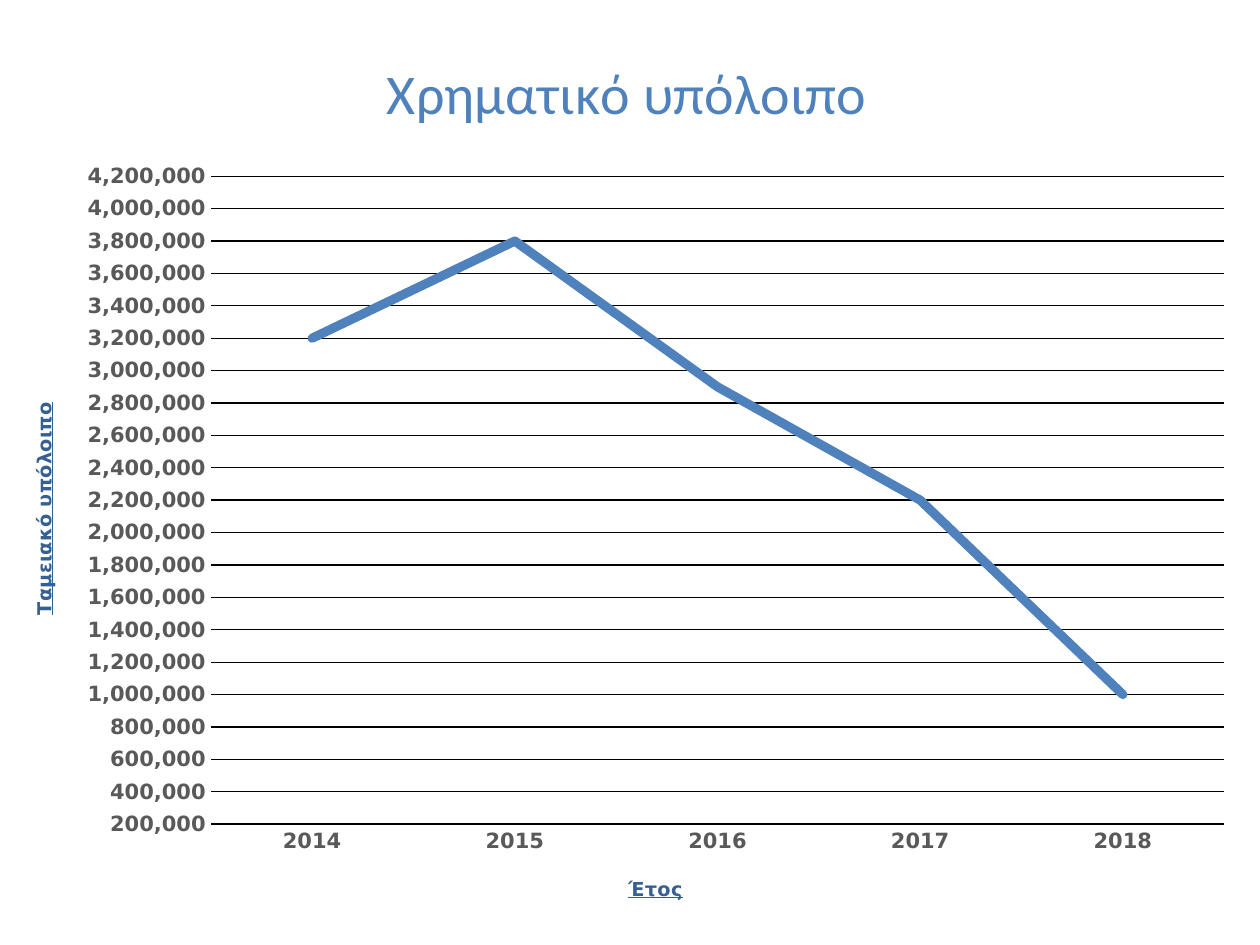
from lxml.etree import SubElement
from pptx import Presentation
from pptx.chart.data import CategoryChartData
from pptx.dml.color import RGBColor
from pptx.enum.chart import XL_CHART_TYPE as ChartType, XL_MARKER_STYLE as Marker, XL_TICK_MARK as Tick
from pptx.oxml.ns import qn
from pptx.util import Cm, Pt

COLORS = {"balance": "4F81BD", "axis_title": "376092", "label": "595959", "rule": "000000"}
BODY_FONT = "DejaVu Sans"
BALANCES = {"2014": 3200000, "2015": 3800000, "2016": 2900000, "2017": 2200000, "2018": 1000000}


def color(name):
    return RGBColor.from_string(COLORS[name])


def style_font(font, size, color_name, bold=True, name=BODY_FONT):
    font.name, font.size, font.bold = name, Pt(size), bold
    font.color.rgb = color(color_name)


def style_line(line, color_name, width):
    line.color.rgb = color(color_name)
    line.width = Pt(width)


def place(parent, index, **percents):
    for old in parent.findall(qn("c:layout")):
        parent.remove(old)
    layout = SubElement(parent, qn("c:layout"))
    parent.insert(index, layout)
    manual = SubElement(layout, qn("c:manualLayout"))
    if "w" in percents:
        SubElement(manual, qn("c:layoutTarget")).set("val", "inner")
    for side in ("x", "y"):
        SubElement(manual, qn(f"c:{side}Mode")).set("val", "edge")
    for key, percent in percents.items():
        SubElement(manual, qn(f"c:{key}")).set("val", f"{percent / 100:.4f}")


def write_title(title, text, x, y, size, color_name, **font_options):
    title.text_frame.text = text
    font = title.text_frame.paragraphs[0].font
    style_font(font, size, color_name, **font_options)
    place(title._element, 1, x=x, y=y)
    return font


def style_axis(axis, text, x, y, rotation):
    axis.major_tick_mark = axis.minor_tick_mark = Tick.NONE
    style_font(axis.tick_labels.font, 12, "label")
    write_title(axis.axis_title, text, x, y, 11, "axis_title").underline = True
    body = axis.axis_title.text_frame._txBody.bodyPr
    body.set("rot", str(rotation * 60000))
    body.set("vert", "horz")


def add_balance_chart(slide):
    data = CategoryChartData(number_format="#,##0")
    data.categories = list(BALANCES)
    data.add_series("Series 1", list(BALANCES.values()))
    chart = slide.shapes.add_chart(
        ChartType.LINE, Cm(0.1), Cm(0.36), Cm(25.07), Cm(18.36), data).chart
    chart.has_legend = False
    style_font(chart.font, 10, "rule", bold=False)
    write_title(chart.chart_title, "Χρηματικό υπόλοιπο", 29.9, 2.8, 32,
                "balance", bold=False, name="Calibri")
    place(chart._chartSpace.chart.plotArea, 0, x=16.55, y=17.4, w=81.5, h=71.15)
    return chart


def style_balance_axes(chart):
    years, amounts = chart.category_axis, chart.value_axis
    style_axis(years, "Έτος", 49.85, 93.85, 0)
    style_line(years.format.line, "rule", 0.75)
    style_axis(amounts, "Ταμειακό υπόλοιπο", 1.8, 41.8, -90)
    amounts.format.line.fill.background()
    amounts.minimum_scale, amounts.maximum_scale = 200000, 4200000
    amounts.major_unit = 200000
    amounts.tick_labels.number_format = "#,##0"
    amounts.tick_labels.number_format_is_linked = False
    style_line(amounts.major_gridlines.format.line, "rule", 0.75)


def style_balance_line(chart):
    chart.plots[0].vary_by_categories = False
    balance = chart.plots[0].series[0]
    balance.smooth = False
    balance.marker.style = Marker.NONE
    style_line(balance.format.line, "balance", 5.25)
    balance._element.spPr.find(qn("a:ln")).set("cap", "rnd")


def main():
    deck = Presentation()
    deck.slide_width, deck.slide_height = Cm(25.4), Cm(19.05)
    slide = deck.slides.add_slide(deck.slide_layouts[6])
    chart = add_balance_chart(slide)
    style_balance_axes(chart)
    style_balance_line(chart)
    deck.save("out.pptx")


if __name__ == "__main__":
    main()
